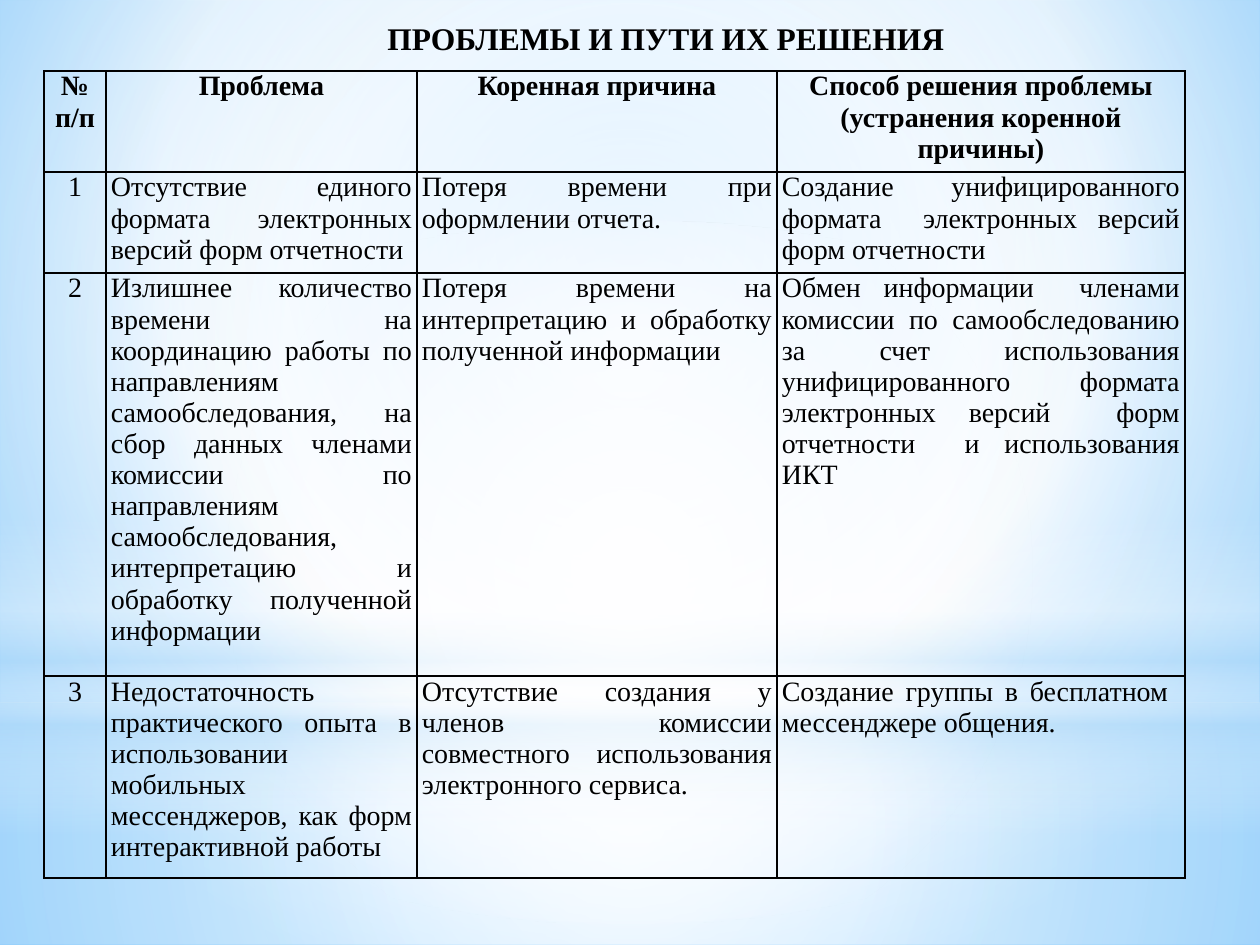
from dataclasses import dataclass
from typing import Optional

from lxml import etree
from pptx import Presentation
from pptx import util as u
from pptx.dml.color import RGBColor
from pptx.enum import shapes, text
from pptx.oxml.ns import qn

PX = 914400 / 126
FONT = "Times New Roman"
COLORS = {"white": "FFFFFF", "black": "000000", "haze": "B4DCFA",
          "sky": "9ED5FF", "deep": "5BB9FF"}


@dataclass(frozen=True)
class Gradient:
    stops: tuple  # (position %, colour name, opacity %)
    focus: Optional[tuple] = (50, 50, 50, 50)  # left, top, right, bottom %
    angle: int = 0  # used when there is no focus


@dataclass(frozen=True)
class Glow:
    top: int
    height: int
    gradient: Gradient
    kind: shapes.MSO_SHAPE = shapes.MSO_SHAPE.RECTANGLE


SKY = Gradient(((0, "sky", 100), (60, "white", 100), (100, "deep", 100)),
               (20, 10, 20, 60))
GLOWS = (
    Glow(703, 242, Gradient(((0, "white", 91), (37, "white", 76), (100, "haze", 79)))),
    Glow(0, 703, Gradient(((0, "white", 89), (48, "white", 62), (100, "haze", 79)))),
    Glow(519, 315, Gradient(((0, "white", 0), (29, "white", 30), (45, "haze", 40),
                             (55, "white", 26), (65, "haze", 60), (100, "white", 0)),
                            None, 90)),
    Glow(221, 703, Gradient(((0, "white", 100), (56, "white", 0))),
         shapes.MSO_SHAPE.OVAL),
)

COLUMNS = (62, 311, 360, 408)
ROWS = (101, 101, 403, 202)
CELLS = (
    ("№ п/п", "Проблема", "Коренная причина",
     "Способ решения проблемы (устранения коренной причины)"),
    ("1", "Отсутствие единого формата электронных версий форм отчетности",
     "Потеря времени при оформлении отчета.",
     "Создание унифицированного формата  электронных версий форм отчетности"),
    ("2", "Излишнее количество времени на координацию работы по направлениям "
     "самообследования, на сбор данных членами комиссии по направлениям "
     "самообследования, интерпретацию и обработку полученной информации",
     "Потеря времени на интерпретацию и обработку полученной информации",
     "Обмен информации  членами комиссии по самообследованию за счет "
     "использования унифицированного формата электронных версий  форм "
     "отчетности  и использования ИКТ"),
    ("3", "Недостаточность практического опыта в использовании мобильных "
     "мессенджеров, как форм интерактивной работы",
     "Отсутствие создания у членов комиссии совместного использования "
     "электронного сервиса.",
     "Создание группы в бесплатном  мессенджере общения."),
)


def px(n: int) -> u.Emu:
    return u.Emu(round(n * PX))


def add(parent, tag: str, **attrs):
    return etree.SubElement(parent, qn(tag), {k: str(v) for k, v in attrs.items()})


def set_gradient(fill, root, gradient: Gradient) -> None:
    fill.gradient()
    grad = next(root.iter(qn("a:gradFill")))
    for child in list(grad):
        grad.remove(child)
    stops = add(grad, "a:gsLst")
    for pos, color, opacity in gradient.stops:
        stop = add(stops, "a:gs", pos=pos * 1000)
        clr = add(stop, "a:srgbClr", val=COLORS[color])
        if opacity < 100:
            add(clr, "a:alpha", val=opacity * 1000)
    if gradient.focus:
        route = add(grad, "a:path", path="circle")
        add(route, "a:fillToRect",
            **{side: v * 1000 for side, v in zip("ltrb", gradient.focus)})
    else:
        add(grad, "a:lin", ang=gradient.angle * 60000, scaled=0)


def add_glow(s, glow: Glow) -> None:
    sp = s.shapes.add_shape(glow.kind, 0, px(glow.top), px(1260), px(glow.height))
    sp.shadow.inherit = False
    sp.line.fill.background()
    set_gradient(sp.fill, sp.element, glow.gradient)


def style(p, size: int, bold: bool, align) -> None:
    p.alignment = align
    p.font.name = FONT
    p.font.size = u.Pt(size)
    p.font.bold = bold
    p.font.color.rgb = RGBColor.from_string(COLORS["black"])


def add_title(s, words: str) -> None:
    tf = s.shapes.add_textbox(px(372), px(10), px(588), px(54)).text_frame
    tf.word_wrap = False
    tf.auto_size = text.MSO_AUTO_SIZE.SHAPE_TO_FIT_TEXT
    p = tf.paragraphs[0]
    p.text = words
    p.line_spacing = 1.07
    style(p, 18, True, text.PP_ALIGN.CENTER)


def set_borders(cell) -> None:
    props = cell._tc.get_or_add_tcPr()
    for i, side in enumerate(("a:lnL", "a:lnR", "a:lnT", "a:lnB")):
        line = etree.Element(qn(side), w=str(u.Pt(1)))
        add(add(line, "a:solidFill"), "a:srgbClr", val=COLORS["black"])
        props.insert(i, line)


def add_problem_table(s) -> None:
    table = s.shapes.add_table(len(ROWS), len(COLUMNS), px(44), px(71),
                               px(sum(COLUMNS)), px(sum(ROWS))).table
    table.first_row = table.horz_banding = False
    for column, width in zip(table.columns, COLUMNS):
        column.width = px(width)
    for i, (row, height) in enumerate(zip(table.rows, ROWS)):
        row.height = px(height)
        for j, cell in enumerate(row.cells):
            cell.margin_left = cell.margin_right = px(5)
            cell.margin_top = cell.margin_bottom = 0
            cell.fill.background()
            set_borders(cell)
            cell.text = CELLS[i][j]
            centred = i == 0 or j == 0
            style(cell.text_frame.paragraphs[0], 16, i == 0,
                  text.PP_ALIGN.CENTER if centred else text.PP_ALIGN.JUSTIFY)


def main() -> None:
    prs = Presentation()
    prs.slide_width, prs.slide_height = px(1260), px(945)
    s = prs.slides.add_slide(prs.slide_layouts[6])

    # Sky background with soft glows
    set_gradient(s.background.fill, s.element, SKY)
    for glow in GLOWS:
        add_glow(s, glow)

    # Title and table of problems
    add_title(s, "ПРОБЛЕМЫ И ПУТИ ИХ РЕШЕНИЯ")
    add_problem_table(s)
    prs.save("out.pptx")


if __name__ == "__main__":
    main()
